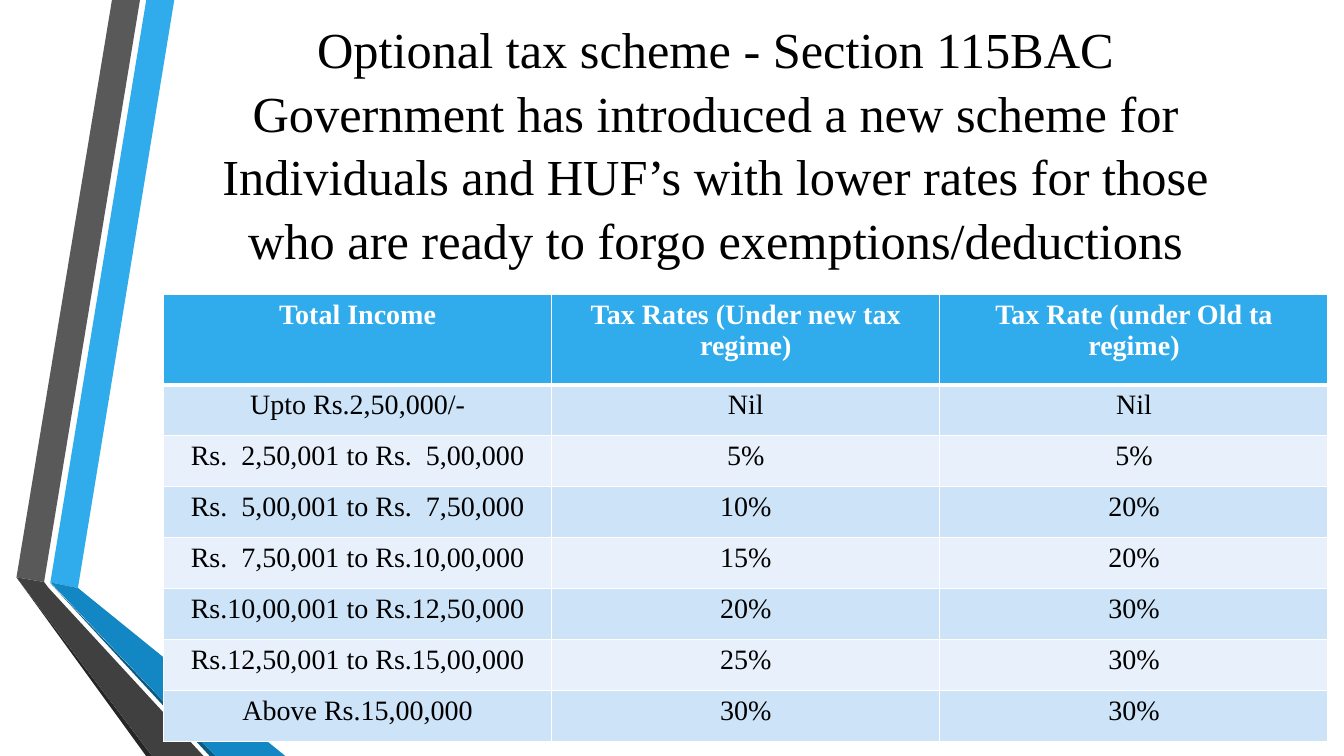
import pptx
import pptx.dml.color
import pptx.enum.text
import pptx.oxml
import pptx.oxml.ns
import pptx.util

Pt = pptx.util.Pt
RGBColor = pptx.dml.color.RGBColor
CENTER = pptx.enum.text.PP_ALIGN.CENTER

theme = {
    "font": "Times New Roman", "title_size": Pt(36), "table_size": Pt(20),
    "text": "000000", "white": "FFFFFF", "bands": ("CDE3F8", "E8F1FB"),
    "blue": "30ACEC", "blue_mid": "1287C3", "blue_dark": "0C5A82",
    "gray": "595959", "gray_mid": "404040", "gray_dark": "262626",
}


def style_paragraph(paragraph, size, color, bold=False):
    paragraph.alignment = CENTER
    paragraph.font.name = theme["font"]
    paragraph.font.size = size
    paragraph.font.bold = bold
    paragraph.font.color.rgb = RGBColor.from_string(theme[color])


def add_border(cell, side, width):
    namespace = pptx.oxml.ns.nsdecls("a")
    cell._tc.get_or_add_tcPr().append(pptx.oxml.parse_xml(
        f'<a:ln{side} {namespace} w="{Pt(width)}"><a:solidFill>'
        f'<a:srgbClr val="{theme["white"]}"/></a:solidFill></a:ln{side}>'))


presentation = pptx.Presentation()
presentation.slide_width = Pt(960)
presentation.slide_height = Pt(540)
slide = presentation.slides.add_slide(presentation.slide_layouts[6])

# Folded ribbons on the left edge
ribbons = [
    ("blue", [(36, 416), (55.7, 420), (124.5, 0), (104.5, 0)]),
    ("gray", [(100, 0), (80, 0), (11.8, 412.4), (31.5, 415.7)]),
    ("gray_dark", [(11.8, 412.4), (104.4, 540), (108.7, 540)]),
    ("blue_dark", [(36, 416.6), (149.8, 540), (154, 540)]),
    ("blue_mid", [(36, 416), (154, 540), (203.8, 540), (55.7, 420)]),
    ("gray_mid", [(145.4, 540), (34.6, 419.8), (31.5, 415.7),
                  (11.8, 412.4), (108.7, 540)]),
]
for color, corners in ribbons:
    points = [(Pt(x), Pt(y)) for x, y in corners]
    builder = slide.shapes.build_freeform(*points[0])
    builder.add_line_segments(points[1:], close=True)
    ribbon = builder.convert_to_shape()
    ribbon.shadow.inherit = False
    ribbon.fill.solid()
    ribbon.fill.fore_color.rgb = RGBColor.from_string(theme[color])
    ribbon.line.fill.background()

# Title
title = slide.shapes.add_textbox(Pt(116.8), Pt(10.8), Pt(789), Pt(181.4))
title_frame = title.text_frame
title_frame.word_wrap = True
title_frame.vertical_anchor = pptx.enum.text.MSO_ANCHOR.MIDDLE
title_paragraph = title_frame.paragraphs[0]
title_paragraph.text = (
    "Optional tax scheme - Section 115BAC\v"
    "Government has introduced a new scheme for Individuals and HUF’s with "
    "lower rates for those who are ready to forgo exemptions/deductions")
title_paragraph.line_spacing = 1.05
style_paragraph(title_paragraph, theme["title_size"], "text")

# Tax rate table
rates = [
    ("Total Income", "Tax Rates (Under new tax regime)", "Tax Rate (under Old ta regime)"),
    ("Upto Rs.2,50,000/-", "Nil", "Nil"),
    ("Rs.  2,50,001 to Rs.  5,00,000", "5%", "5%"),
    ("Rs.  5,00,001 to Rs.  7,50,000", "10%", "20%"),
    ("Rs.  7,50,001 to Rs.10,00,000", "15%", "20%"),
    ("Rs.10,00,001 to Rs.12,50,000", "20%", "30%"),
    ("Rs.12,50,001 to Rs.15,00,000", "25%", "30%"),
    ("Above Rs.15,00,000", "30%", "30%"),
]
header_height, row_height, column_width = 64.4, 36.45, 277.3
table = slide.shapes.add_table(
    len(rates), 3, Pt(116.8), Pt(210.4), Pt(3 * column_width),
    Pt(header_height + 7 * row_height)).table
table.first_row = table.horz_banding = False
for column in table.columns:
    column.width = Pt(column_width)
for row_index, values in enumerate(rates):
    header = row_index == 0
    table.rows[row_index].height = Pt(header_height if header else row_height)
    fill_color = theme["blue"] if header else theme["bands"][(row_index - 1) % 2]
    for column_index, value in enumerate(values):
        cell = table.cell(row_index, column_index)
        cell.text = value
        style_paragraph(cell.text_frame.paragraphs[0], theme["table_size"],
                        "white" if header else "text", header)
        add_border(cell, "L", 1)
        add_border(cell, "R", 1)
        add_border(cell, "T", 3 if row_index == 1 else 1)
        add_border(cell, "B", 3 if header else 1)
        cell.fill.solid()
        cell.fill.fore_color.rgb = RGBColor.from_string(fill_color)

presentation.save("out.pptx")
